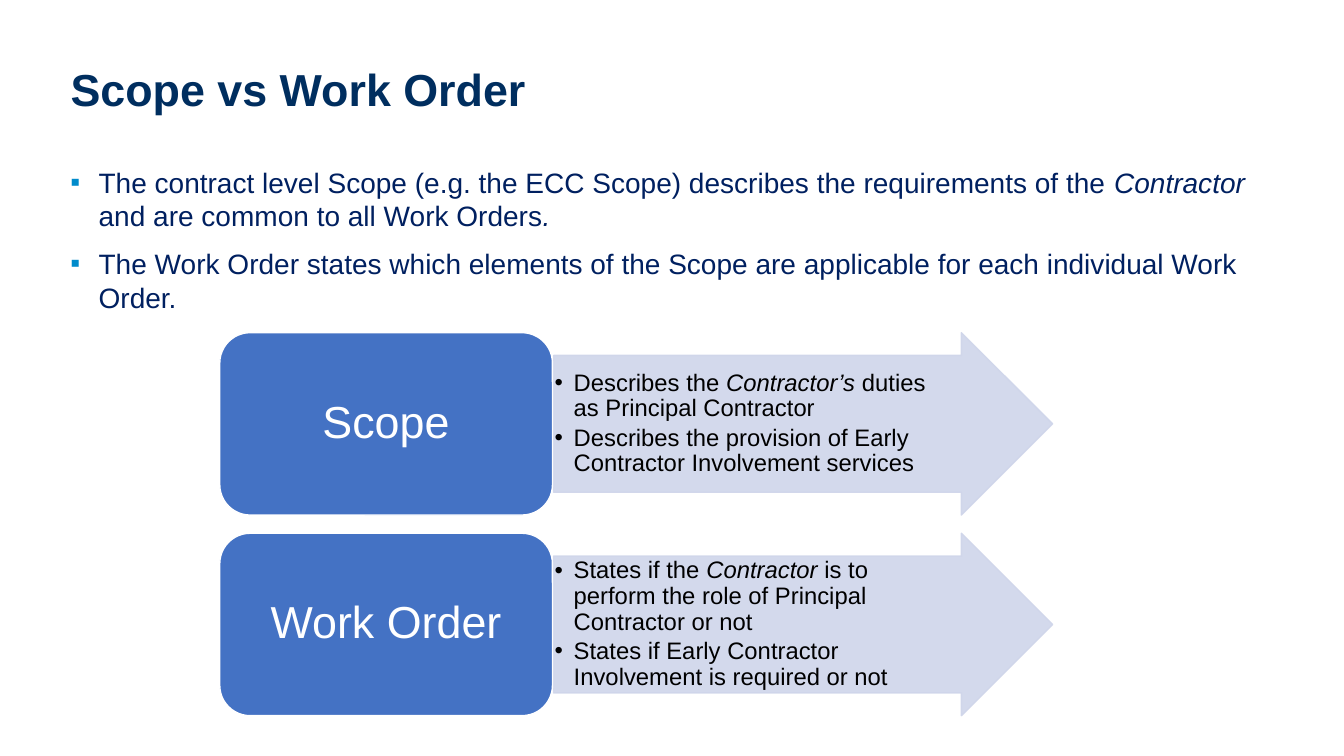
"""Builds the slide comparing the Scope with the Work Order."""
from lxml import etree
from pptx import Presentation
from pptx import util as u
from pptx.dml.color import RGBColor
from pptx.enum import shapes, text
from pptx.oxml.ns import qn

WIDE, HIGH = 13.33, 7.5
LEFT, TOP, STEP, TALL = 2.18, 3.3, 1.99, 1.81
BOX, ARROW = 3.3, 4.95
MID = text.MSO_ANCHOR.MIDDLE
POINTS = [
    [("The contract level Scope (e.g. the ECC Scope) describes the requirements of the ", False),
     ("Contractor ", True), ("and are common to all Work Orders", False), (".", True)],
    [("The Work Order states which elements of the Scope are applicable "
      "for each individual Work Order.", False)],
]
ROWS = [
    ("Scope", [
        [("Describes the ", False), ("Contractor’s ", True),
         ("duties as Principal Contractor", False)],
        [("Describes the provision of Early Contractor Involvement services", False)]]),
    ("Work Order", [
        [("States if the ", False), ("Contractor ", True),
         ("is to perform the role of Principal Contractor or not", False)],
        [("States if Early Contractor Involvement is required or not", False)]]),
]


def paint(part, shade):
    part.rgb = RGBColor.from_string(shade)


def write(frame, paras, size, shade, look, bold=False, mark=None, tint=None, dent=0, gap=0):
    for num, runs in enumerate(paras):
        para = frame.paragraphs[0] if num == 0 else frame.add_paragraph()
        if mark:
            props = para._p.get_or_add_pPr()
            props.set("marL", str(u.Inches(dent)))
            props.set("indent", str(-u.Inches(dent)))
            if tint:
                hue = etree.SubElement(props, qn("a:buClr"))
                etree.SubElement(hue, qn("a:srgbClr"), val=tint)
            etree.SubElement(props, qn("a:buFont"), typeface="Arial")
            etree.SubElement(props, qn("a:buChar"), char=mark)
        for key, val in look.items():
            setattr(para, key, val)
        if num:
            para.space_before = u.Pt(gap)
        for words, slant in runs:
            run = para.add_run()
            run.text = words
            style = {"name": "Arial", "size": u.Pt(size), "bold": bold, "italic": slant}
            for key, val in style.items():
                setattr(run.font, key, val)
            paint(run.font.color, shade)


deck = Presentation()
deck.slide_width, deck.slide_height = u.Inches(WIDE), u.Inches(HIGH)
slide = deck.slides.add_slide(deck.slide_layouts[5])

title = slide.shapes.title
place = {"left": 0.6, "top": 0.4, "width": 12.13, "height": 1.03}
for key, val in place.items():
    setattr(title, key, u.Inches(val))
title.text_frame.vertical_anchor = MID
write(title.text_frame, [[("Scope vs Work Order", False)]], 32, "002E5F",
      {"alignment": text.PP_ALIGN.LEFT, "line_spacing": 0.9}, bold=True)

body = slide.shapes.add_textbox(*map(u.Inches, (0.6, 1.59, 12.22, 1.6)))
body.text_frame.word_wrap = True
write(body.text_frame, POINTS, 20, "002060", {"alignment": text.PP_ALIGN.LEFT},
      mark="▪", tint="008BCB", dent=0.28, gap=10)

KINDS = [
    (shapes.MSO_SHAPE.RIGHT_ARROW, LEFT + BOX + 0.01, ARROW, "CFD5EA", "CFD5EA",
     (0.01, 0.01, 0.46, 0.01)),
    (shapes.MSO_SHAPE.ROUNDED_RECTANGLE, LEFT, BOX, "4472C4", "FFFFFF",
     (0.13, 0.07, 0.13, 0.07)),
]
for row, (name, notes) in enumerate(ROWS):
    pair = []
    for kind, left, wide, fill, edge, pads in KINDS:
        shape = slide.shapes.add_shape(
            kind, *map(u.Inches, (left, TOP + row * STEP, wide, TALL)))
        shape.shadow.inherit = False
        shape.fill.solid()
        paint(shape.fill.fore_color, fill)
        shape.line.width = u.Pt(1)
        paint(shape.line.color, edge)
        frame = shape.text_frame
        frame.word_wrap = True
        frame.vertical_anchor = MID
        for side, pad in zip(("left", "top", "right", "bottom"), pads):
            setattr(frame, "margin_" + side, u.Inches(pad))
        pair.append(shape)
    arrow, box = pair
    arrow.adjustments[0] = 0.75
    for hue in arrow._element.spPr.iter(qn("a:srgbClr")):
        etree.SubElement(hue, qn("a:alpha"), val="90000")
    write(arrow.text_frame, notes, 17, "000000",
          {"alignment": text.PP_ALIGN.LEFT, "line_spacing": 0.9},
          mark="•", dent=0.19, gap=2.5)
    write(box.text_frame, [[(name, False)]], 32, "FFFFFF",
          {"alignment": text.PP_ALIGN.CENTER, "line_spacing": 0.9})

deck.save("out.pptx")
